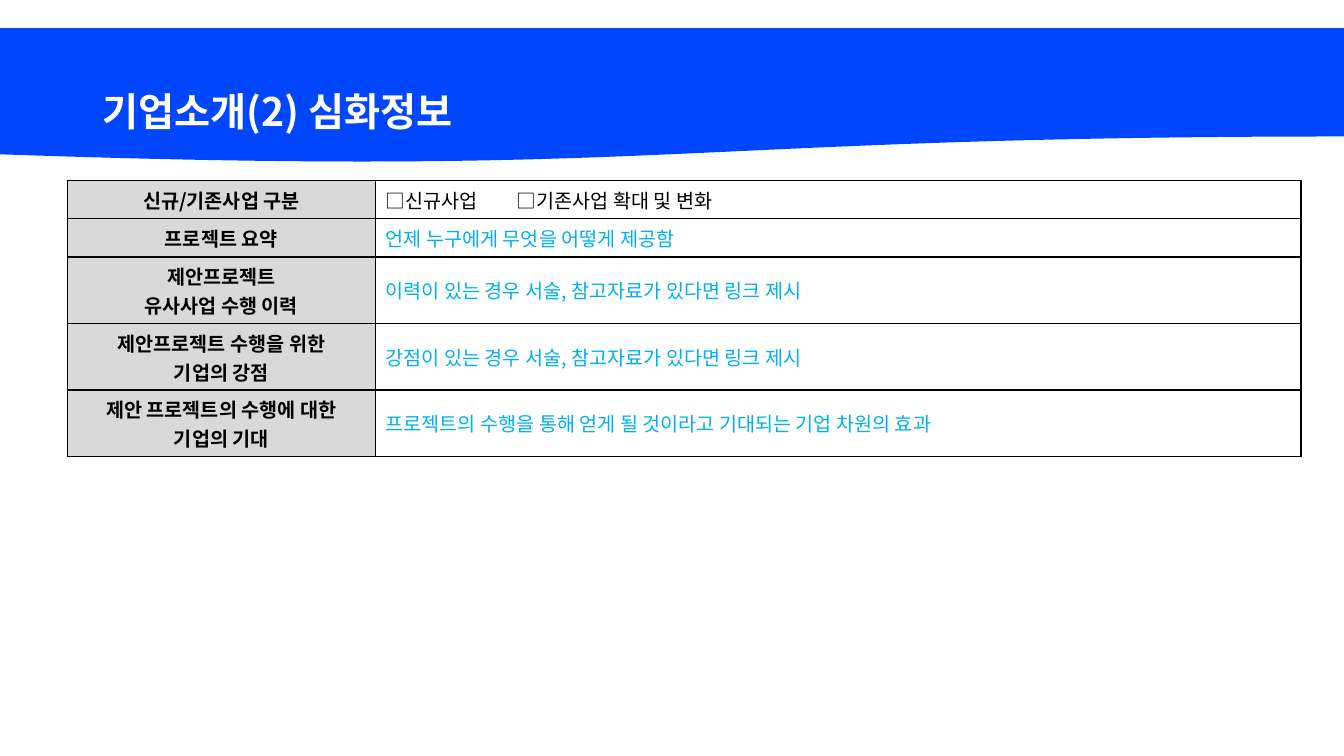
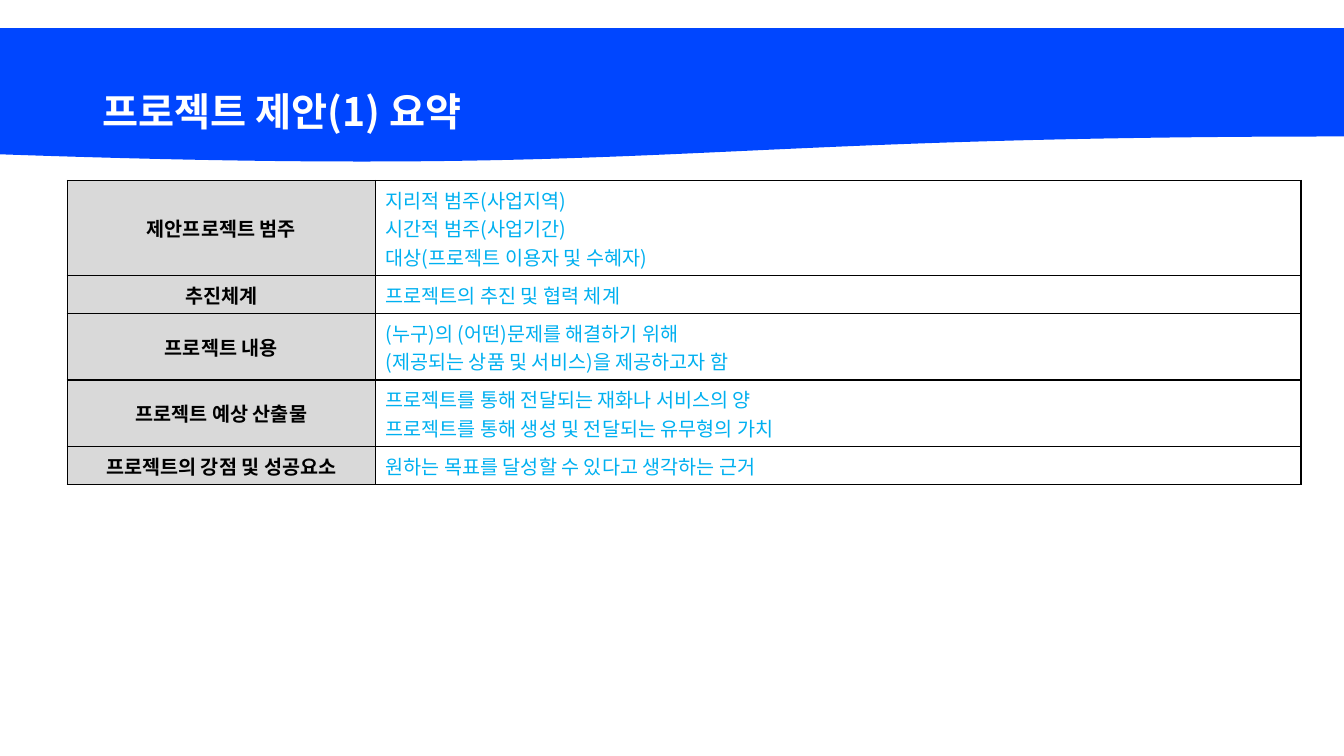
from lxml import etree
from pptx import Presentation
from pptx.dml.color import RGBColor
from pptx.enum.shapes import MSO_SHAPE
from pptx.enum.text import MSO_ANCHOR, PP_ALIGN
from pptx.oxml.ns import qn
from pptx.util import Inches, Pt

WAVE = MSO_SHAPE.FLOWCHART_DOCUMENT
MIDDLE = MSO_ANCHOR.MIDDLE
LEFT, CENTER = PP_ALIGN.LEFT, PP_ALIGN.CENTER

BLUE, WHITE, BLACK = "0046FF", "FFFFFF", "000000"
GRAY, HINT = "D9D9D9", "00B0F0"
FONT = "Noto Sans CJK KR"
TITLE_SIZE, BODY_SIZE = 28, 14
LINE_HEIGHT, CELL_PADDING = 0.28, 0.1
LABEL_SHARE = 0.25
TAB_STOP = 1.3

COMPANY_ROWS = [
    ("신규/기존사업 구분", "□신규사업\t□기존사업 확대 및 변화", BLACK),
    ("프로젝트 요약", "언제 누구에게 무엇을 어떻게 제공함", HINT),
    ("제안프로젝트\n유사사업 수행 이력",
     "이력이 있는 경우 서술, 참고자료가 있다면 링크 제시", HINT),
    ("제안프로젝트 수행을 위한\n기업의 강점",
     "강점이 있는 경우 서술, 참고자료가 있다면 링크 제시", HINT),
    ("제안 프로젝트의 수행에 대한\n기업의 기대",
     "프로젝트의 수행을 통해 얻게 될 것이라고 기대되는 기업 차원의 효과", HINT),
]
PROPOSAL_ROWS = [
    ("제안프로젝트 범주",
     "지리적 범주(사업지역)\n시간적 범주(사업기간)\n대상(프로젝트 이용자 및 수혜자)", HINT),
    ("추진체계", "프로젝트의 추진 및 협력 체계", HINT),
    ("프로젝트 내용",
     "(누구)의 (어떤)문제를 해결하기 위해\n(제공되는 상품 및 서비스)을 제공하고자 함", HINT),
    ("프로젝트 예상 산출물",
     "프로젝트를 통해 전달되는 재화나 서비스의 양\n"
     "프로젝트를 통해 생성 및 전달되는 유무형의 가치", HINT),
    ("프로젝트의 강점 및 성공요소", "원하는 목표를 달성할 수 있다고 생각하는 근거", HINT),
]


def rgb(color):
    return RGBColor.from_string(color)


class Deck:
    """Holds the shared style and the current slide; lengths are percent of the slide."""

    def __init__(self):
        self.prs = Presentation()
        self.prs.slide_width = Inches(13.33)
        self.prs.slide_height = Inches(7.5)
        self.s = None

    def x(self, percent):
        return round(self.prs.slide_width * percent / 100)

    def y(self, percent):
        return round(self.prs.slide_height * percent / 100)

    def slide(self, title):
        self.s = self.prs.slides.add_slide(self.prs.slide_layouts[6])
        self.band()
        self.title(title)

    def band(self):
        sp = self.s.shapes.add_shape(WAVE, 0, self.y(3.73), self.x(100), self.y(17.87))
        sp.shadow.inherit = False
        sp.fill.solid()
        sp.fill.fore_color.rgb = rgb(BLUE)
        sp.line.fill.background()

    def title(self, text):
        sp = self.s.shapes.add_textbox(self.x(6.9), self.y(5.33), self.x(86.25), self.y(19.33))
        tf = sp.text_frame
        tf.word_wrap = True
        tf.vertical_anchor = MIDDLE
        self.add_lines(tf, text, TITLE_SIZE, WHITE, True)
        tf.paragraphs[0].line_spacing = 0.9

    def add_lines(self, tf, text, size, color, bold, align=LEFT):
        for i, line in enumerate(text.split("\n")):
            p = tf.add_paragraph() if i else tf.paragraphs[0]
            p.alignment = align
            if "\t" in line:
                tabs = etree.SubElement(p._p.get_or_add_pPr(), qn("a:tabLst"))
                etree.SubElement(tabs, qn("a:tab"), pos=str(Inches(TAB_STOP)), algn="l")
            r = p.add_run()
            r.text = line
            r.font.size = Pt(size)
            r.font.bold = bold
            r.font.color.rgb = rgb(color)
            r.font.name = FONT
            etree.SubElement(r._r.get_or_add_rPr(), qn("a:ea"), typeface=FONT)

    def border(self, cell):
        tcPr = cell._tc.get_or_add_tcPr()
        for side in ("a:lnL", "a:lnR", "a:lnT", "a:lnB"):
            ln = etree.SubElement(tcPr, qn(side), w=str(Pt(1)))
            fill = etree.SubElement(ln, qn("a:solidFill"))
            etree.SubElement(fill, qn("a:srgbClr"), val=BLACK)

    def cell(self, cell, text, color, label):
        cell.vertical_anchor = MIDDLE
        self.border(cell)
        if label:
            cell.fill.solid()
            cell.fill.fore_color.rgb = rgb(GRAY)
        else:
            cell.fill.background()
        align = CENTER if label else LEFT
        self.add_lines(cell.text_frame, text, BODY_SIZE, color, label, align)

    def table(self, rows):
        heights = [
            Inches(CELL_PADDING + LINE_HEIGHT * (max(label.count("\n"), value.count("\n")) + 1))
            for label, value, _ in rows
        ]
        width = self.x(91.8)
        frame = self.s.shapes.add_table(
            len(rows), 2, self.x(5), self.y(23.87), width, sum(heights))
        table = frame.table
        table.first_row = table.horz_banding = False
        table.columns[0].width = round(width * LABEL_SHARE)
        table.columns[1].width = width - table.columns[0].width
        for i, (label, value, color) in enumerate(rows):
            table.rows[i].height = heights[i]
            self.cell(table.cell(i, 0), label, BLACK, True)
            self.cell(table.cell(i, 1), value, color, False)


def main():
    deck = Deck()
    deck.slide("기업소개(2) 심화정보")
    deck.table(COMPANY_ROWS)
    deck.slide("프로젝트 제안(1) 요약")
    deck.table(PROPOSAL_ROWS)
    deck.prs.save("out.pptx")


if __name__ == "__main__":
    main()
